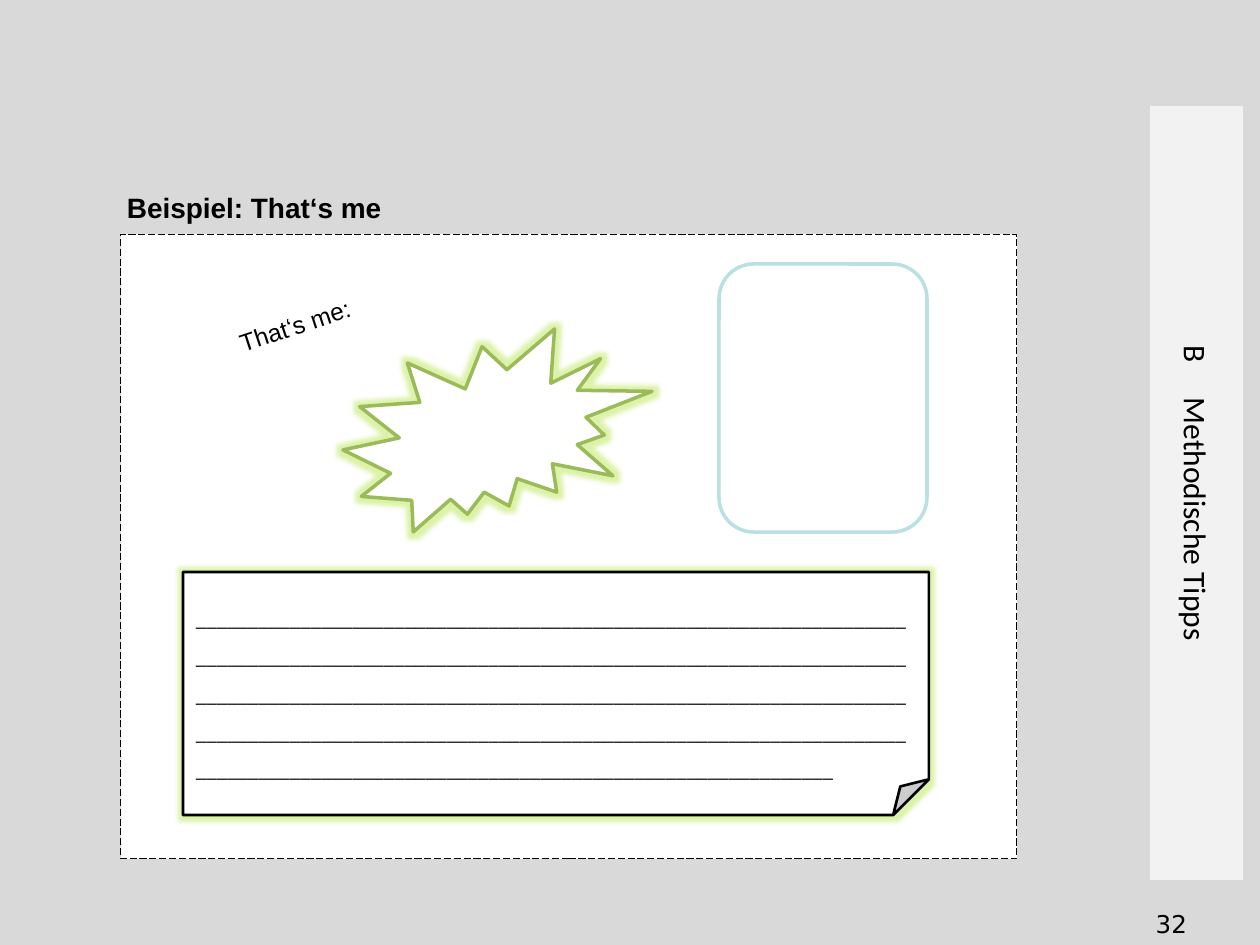
import pptx
import pptx.util
import pptx.dml.color
import pptx.enum.dml
import pptx.enum.shapes
import pptx.enum.text
import pptx.oxml
import pptx.oxml.ns

KIND = pptx.enum.shapes.MSO_SHAPE
ALIGN = pptx.enum.text.PP_ALIGN
ANCHOR = pptx.enum.text.MSO_ANCHOR
DASH = pptx.enum.dml.MSO_LINE.LONG_DASH
SPACE = pptx.oxml.ns.nsdecls("a")
SCALE = 914400 / 126


def px(num):
    """Turn pixels into EMU."""
    return pptx.util.Emu(round(num * SCALE))


def color(code):
    """Turn a hex string into a colour."""
    return pptx.dml.color.RGBColor.from_string(code)


def write(shape, text, size=14, font="Arial", bold=False, align=ALIGN.LEFT,
          anchor=ANCHOR.TOP, pad=(6, 6, 6, 6), wrap=True, lead=None,
          vert=False, gap=None):
    """Put one formatted paragraph in a shape; gap widens its first space."""
    frame = shape.text_frame
    frame.word_wrap = wrap
    frame.vertical_anchor = anchor
    (frame.margin_left, frame.margin_top,
     frame.margin_right, frame.margin_bottom) = map(px, pad)
    if vert:
        frame._txBody.bodyPr.set("vert", "vert")
    para = frame.paragraphs[0]
    para.alignment = align
    if lead:
        para.line_spacing = lead
    for part in text.partition(" ") if gap else [text]:
        run = para.add_run()
        run.text = part
        run.font.size = pptx.util.Pt(size)
        run.font.name = font
        run.font.bold = bold
        run.font.color.rgb = color("000000")
        if part == " ":
            run._r.get_or_add_rPr().set("spc", str(gap * 100))


def label(slide, box, text, turn=0, **form):
    """Add a text box."""
    shape = slide.shapes.add_textbox(*map(px, box))
    shape.rotation = turn
    write(shape, text, **form)


def panel(slide, kind, box, fill="FFFFFF", line=None, width=1, dash=None):
    """Add a filled shape with an optional outline."""
    shape = slide.shapes.add_shape(kind, *map(px, box))
    shape.shadow.inherit = False
    shape.fill.solid()
    shape.fill.fore_color.rgb = color(fill)
    if line:
        shape.line.color.rgb = color(line)
        shape.line.width = pptx.util.Pt(width)
        if dash:
            shape.line.dash_style = dash
    else:
        shape.line.fill.background()
    return shape


def nest(shape, tag, xml):
    """Add an XML node under a tag of the shape's properties."""
    node = shape._element.spPr.find(".//" + pptx.oxml.ns.qn(tag))
    node.append(pptx.oxml.parse_xml(xml))


def glow(shape, code="A8E02A", size=5):
    """Give a shape a soft glow."""
    nest(shape, "a:effectLst",
         f'<a:glow {SPACE} rad="{size * 12700}"><a:srgbClr val="{code}">'
         '<a:alpha val="40000"/></a:srgbClr></a:glow>')


def main():
    """Build the slide."""
    deck = pptx.Presentation()
    deck.slide_width, deck.slide_height = px(1260), px(945)
    slide = deck.slides.add_slide(deck.slide_layouts[6])
    slide.background.fill.solid()
    slide.background.fill.fore_color.rgb = color("D9D9D9")

    label(slide, (121, 185, 823, 47), "Beispiel: That‘s me", size=16, bold=True)
    tab = panel(slide, KIND.RECTANGLE, (1150, 106, 93, 774), fill="F2F2F2")
    write(tab, "B Methodische Tipps", size=18, font="Calibri", vert=True,
          align=ALIGN.CENTER, anchor=ANCHOR.MIDDLE, gap=16)

    panel(slide, KIND.RECTANGLE, (121, 234, 896, 625), line="000000",
          width=0.5, dash=DASH)
    label(slide, (166, 304, 263, 58), "That‘s me:", turn=341.8,
          align=ALIGN.CENTER, pad=(13, 6, 13, 6))
    glow(panel(slide, KIND.EXPLOSION2, (343, 329, 309, 203), line="9BBB59",
               width=2))
    note = panel(slide, KIND.FOLDED_CORNER, (183, 572, 746, 243),
                 line="000000", width=1.5)
    nest(note, "a:avLst", f'<a:gd {SPACE} name="adj" fmla="val 14700"/>')
    glow(note)
    write(note, "_" * 333, size=12, font="Calibri", lead=1.5,
          anchor=ANCHOR.MIDDLE, pad=(13, 30, 13, 6))
    panel(slide, KIND.ROUNDED_RECTANGLE, (719, 264, 208, 268), line="BBE0E3",
          width=2)
    label(slide, (1148, 903, 45, 43), "32", font="DejaVu Sans",
          align=ALIGN.RIGHT, wrap=False)
    deck.save("out.pptx")


if __name__ == "__main__":
    main()
